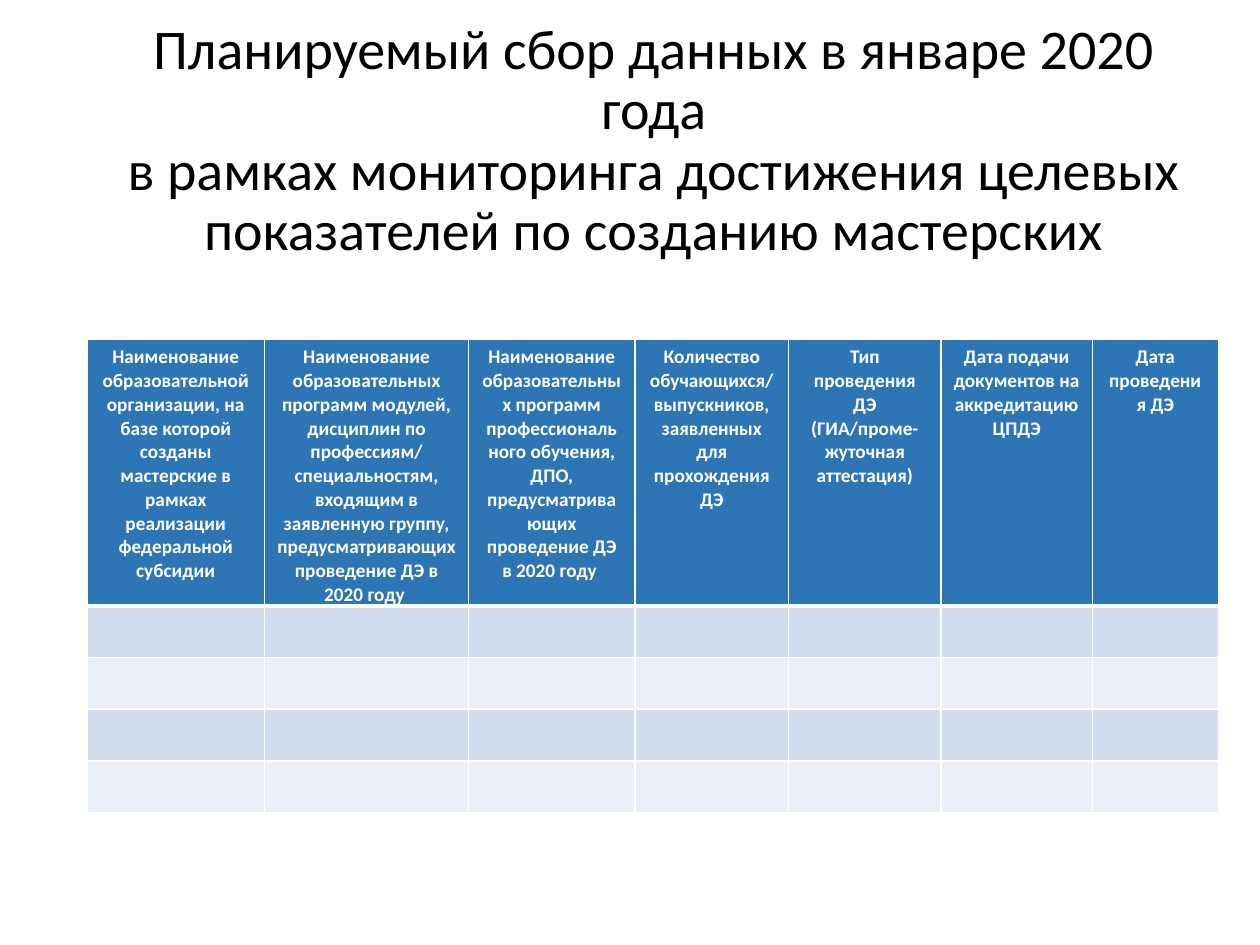
from lxml import etree
from pptx import Presentation
from pptx.dml.color import RGBColor
from pptx.enum import text
from pptx.oxml.ns import qn
from pptx.util import Inches, Pt

TITLE = ["Планируемый сбор данных в январе 2020 года",
         "в рамках мониторинга достижения целевых показателей по созданию мастерских"]
# Heading and width of each column
COLUMNS = [
    ("Наименование образовательной организации, на базе которой созданы "
     "мастерские в рамках реализации федеральной субсидии", 1.41),
    ("Наименование образовательных программ модулей, дисциплин по профессиям/ "
     "специальностям, входящим в заявленную группу, предусматривающих "
     "проведение ДЭ в 2020 году ", 1.62),
    ("Наименование образовательных программ профессионального обучения, ДПО, "
     "предусматривающих проведение ДЭ в 2020 году ", 1.32),
    ("Количество обучающихся/выпускников, заявленных для прохождения ДЭ", 1.22),
    ("Тип проведения ДЭ (ГИА/проме-жуточная аттестация)", 1.21),
    ("Дата подачи документов на аккредитацию ЦПДЭ", 1.2),
    ("Дата проведения ДЭ", 1),
]
EMPTY_ROWS = 4
HEADER_H, ROW_H = 2.1, 0.41
LEFT, WIDTH = 0.69, 9
HEADER_FILL, BANDS = "2E75B6", ("D2DEEF", "EAEFF7")
FONT, WHITE, BLACK = "Calibri", "FFFFFF", "000000"


def rgb(value):
    return RGBColor.from_string(value)


def add_run(p, content, size, color, bold=False):
    r = p.add_run()
    r.text = content
    r.font.name, r.font.size, r.font.bold = FONT, Pt(size), bold
    r.font.color.rgb = rgb(color)


def set_borders(cell, top, bottom):
    """White cell borders; widths in points."""
    pr = cell._tc.get_or_add_tcPr()
    sides = (("lnL", 1), ("lnR", 1), ("lnT", top), ("lnB", bottom))
    for i, (tag, width) in enumerate(sides):
        ln = etree.Element(qn("a:" + tag), w=str(Pt(width)))
        fill = etree.SubElement(ln, qn("a:solidFill"))
        etree.SubElement(fill, qn("a:srgbClr"), val=WHITE)
        pr.insert(i, ln)


prs = Presentation()
prs.slide_width, prs.slide_height = Inches(10), Inches(7.5)
s = prs.slides.add_slide(prs.slide_layouts[6])

# Title
tf = s.shapes.add_textbox(Inches(LEFT), Inches(0.4), Inches(WIDTH), Inches(1.45)).text_frame
tf.word_wrap = True
tf.vertical_anchor = text.MSO_ANCHOR.MIDDLE
p = tf.paragraphs[0]
p.alignment, p.line_spacing = text.PP_ALIGN.CENTER, 0.9
for i, line in enumerate(TITLE):
    if i:
        p.add_line_break()
    add_run(p, line, 32, BLACK)

# Table
table = s.shapes.add_table(EMPTY_ROWS + 1, len(COLUMNS), Inches(LEFT), Inches(2.69),
                           Inches(WIDTH), Inches(HEADER_H + EMPTY_ROWS * ROW_H)).table
for column, (_, width) in zip(table.columns, COLUMNS):
    column.width = Inches(width)

for i, row in enumerate(table.rows):
    row.height = Inches(ROW_H if i else HEADER_H)
    for cell, (heading, _) in zip(row.cells, COLUMNS):
        cell.fill.solid()
        cell.fill.fore_color.rgb = rgb(BANDS[(i - 1) % 2] if i else HEADER_FILL)
        set_borders(cell, top=3 if i == 1 else 1, bottom=1 if i else 3)
        if i == 0:
            p = cell.text_frame.paragraphs[0]
            p.alignment = text.PP_ALIGN.CENTER
            add_run(p, heading, 11, WHITE, bold=True)

prs.save("out.pptx")
